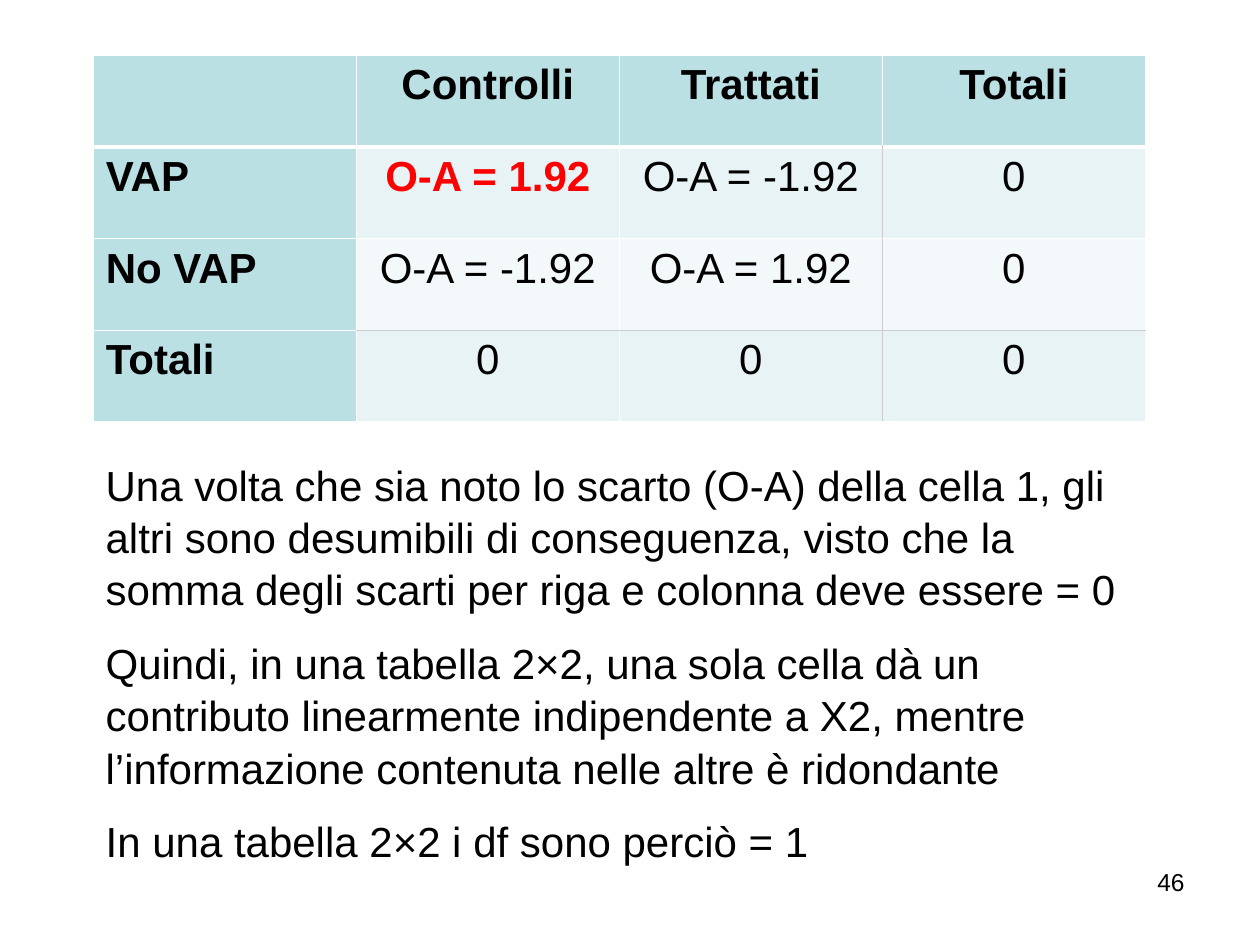
import pptx
import pptx.dml.color
import pptx.enum.text
import pptx.oxml
import pptx.oxml.ns
import pptx.util
from dataclasses import dataclass

Inches = pptx.util.Inches
Pt = pptx.util.Pt
Align = pptx.enum.text.PP_ALIGN


@dataclass(frozen=True)
class Theme:
    font: str = "Arial"
    text: str = "000000"
    accent: str = "FF0000"
    heading_fill: str = "BBE0E3"
    odd_fill: str = "E7F3F4"
    even_fill: str = "F3F9FA"
    border: str = "FFFFFF"
    totals_border: str = "CCCCCC"
    body_size: int = 24
    number_size: int = 14


theme = Theme()


def add_span(para, text, size=theme.body_size, color=theme.text, bold=False):
    span = para.add_run()
    span.text = text
    span.font.name = theme.font
    span.font.size = Pt(size)
    span.font.bold = bold
    span.font.color.rgb = pptx.dml.color.RGBColor.from_string(color)


def set_borders(cell, borders):
    """Draw (side, colour, points) borders; sides in the order L, R, T, B."""
    properties = cell._tc.get_or_add_tcPr()
    for position, (side, color, points) in enumerate(borders):
        line = pptx.oxml.parse_xml(
            f'<a:ln{side} {pptx.oxml.ns.nsdecls("a")} w="{Pt(points)}">'
            f'<a:solidFill><a:srgbClr val="{color}"/></a:solidFill></a:ln{side}>'
        )
        properties.insert(position, line)


deck = pptx.Presentation()
deck.slide_width = Inches(10)
deck.slide_height = Inches(7.5)
page = deck.slides.add_slide(deck.slide_layouts[6])

# Slide number
number_box = page.shapes.add_textbox(Inches(8.54), Inches(6.83), Inches(0.96), Inches(0.52))
number_box.text_frame.word_wrap = True
number_para = number_box.text_frame.paragraphs[0]
number_para.alignment = Align.RIGHT
add_span(number_para, "46", size=theme.number_size)

# Deviations table
rows = [
    ["", "Controlli", "Trattati", "Totali"],
    ["VAP", "O-A = 1.92", "O-A = -1.92", "0"],
    ["No VAP", "O-A = -1.92", "O-A = 1.92", "0"],
    ["Totali", "0", "0", "0"],
]
last = len(rows) - 1
free_cell = (1, 1)
table = page.shapes.add_table(
    len(rows), len(rows[0]), Inches(0.74), Inches(0.44), Inches(8.35), Inches(2.91)
).table

for row, texts in enumerate(rows):
    for column, text in enumerate(texts):
        cell = table.cell(row, column)
        heading = row == 0 or column == 0
        free = (row, column) == free_cell

        if heading:
            fill = theme.heading_fill
        else:
            fill = theme.odd_fill if row % 2 else theme.even_fill
        cell.fill.solid()
        cell.fill.fore_color.rgb = pptx.dml.color.RGBColor.from_string(fill)

        # Grey lines set the totals apart from the inner cells
        grey_sides = set()
        if not heading:
            grey_sides = {
                side
                for side, beside_totals in (
                    ("L", column == last),
                    ("R", column == last - 1),
                    ("T", row == last),
                    ("B", row == last - 1),
                )
                if beside_totals
            }
        thick_side = {0: "B", 1: "T"}.get(row)
        set_borders(cell, [
            (
                side,
                theme.totals_border if side in grey_sides else theme.border,
                3 if side == thick_side else 1,
            )
            for side in "LRTB"
        ])

        para = cell.text_frame.paragraphs[0]
        para.alignment = Align.LEFT if column == 0 else Align.CENTER
        if text:
            add_span(
                para, text,
                color=theme.accent if free else theme.text,
                bold=heading or free,
            )

# Explanation
explanation = [
    "Una volta che sia noto lo scarto (O-A) della cella 1, gli altri sono desumibili "
    "di conseguenza, visto che la somma degli scarti per riga e colonna deve essere = 0",
    "Quindi, in una tabella 2×2, una sola cella dà un contributo linearmente "
    "indipendente a X2, mentre l’informazione contenuta nelle altre è ridondante",
    "In una tabella 2×2 i df sono perciò = 1",
]
explanation_box = page.shapes.add_textbox(Inches(0.74), Inches(3.58), Inches(8.35), Inches(3.26))
frame = explanation_box.text_frame
frame.word_wrap = True
frame.auto_size = pptx.enum.text.MSO_AUTO_SIZE.SHAPE_TO_FIT_TEXT
for index, text in enumerate(explanation):
    para = frame.add_paragraph() if index else frame.paragraphs[0]
    para.line_spacing = 1.04
    para.space_after = Pt(12)
    add_span(para, text)

deck.save("out.pptx")
